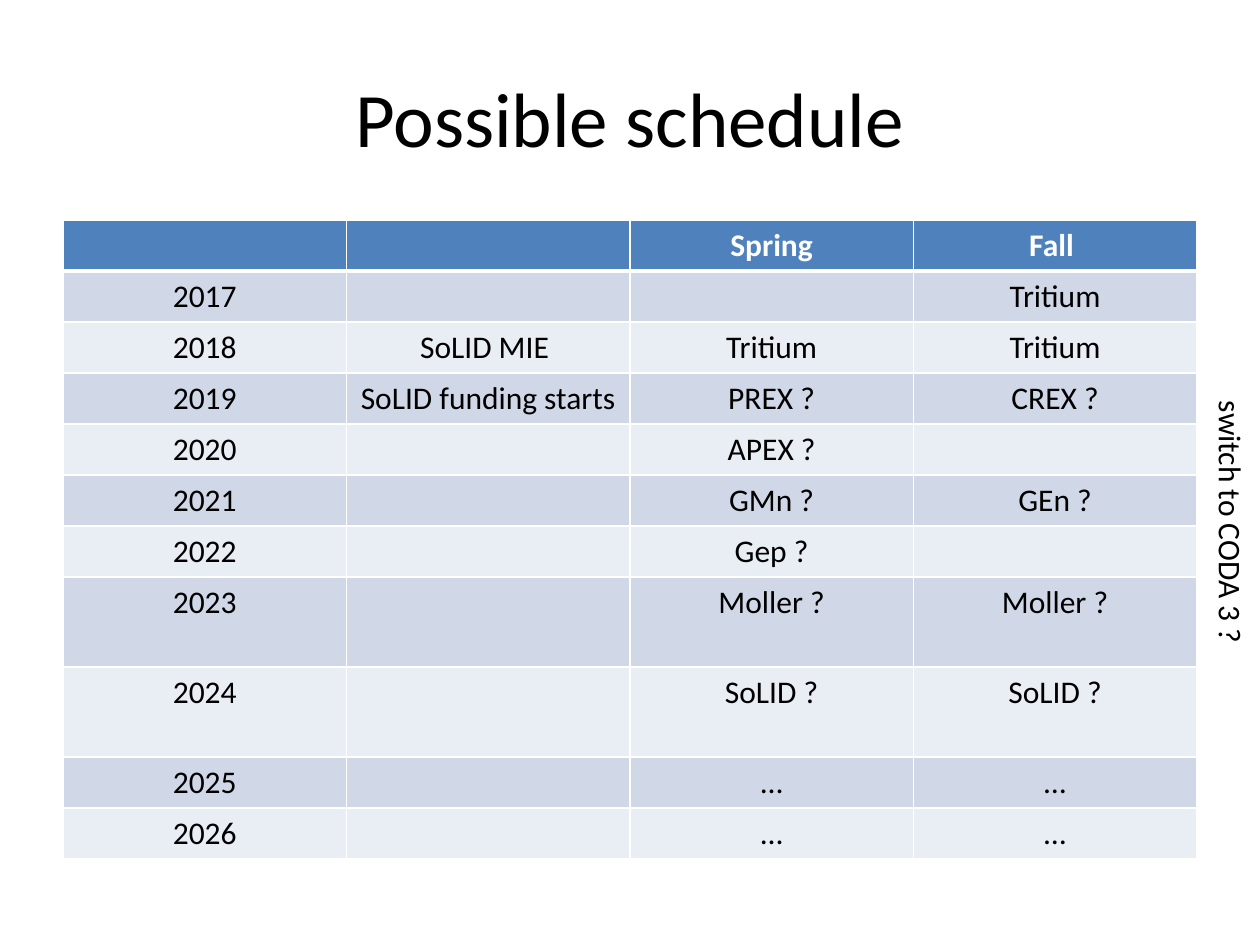
from dataclasses import dataclass

from lxml.etree import SubElement
from pptx import Presentation
from pptx.dml.color import RGBColor as Rgb
from pptx.enum.text import MSO_ANCHOR as Anchor, PP_ALIGN as Align
from pptx.oxml.ns import qn
from pptx.util import Pt

PX = 914400 // 126


@dataclass(frozen=True)
class Theme:
    font: str = "Calibri"
    title_size: int = 44
    body_size: int = 18
    ink: str = "000000"
    paper: str = "FFFFFF"
    header: str = "4F81BD"
    bands: tuple = ("D0D8E8", "E9EDF4")
    thin: int = 1
    thick: int = 3


THEME = Theme()

SCHEDULE = [
    ("", "", "Spring", "Fall "),
    ("2017", "", "", "Tritium"),
    ("2018", "SoLID MIE ", "Tritium", "Tritium"),
    ("2019", "SoLID funding starts", "PREX ?", "CREX ?"),
    ("2020", "", "APEX ?", ""),
    ("2021", "", "GMn ?", "GEn ?"),
    ("2022", "", "Gep ?", ""),
    ("2023", "", "Moller ?", "Moller ?"),
    ("2024", "", "SoLID ?", "SoLID ?"),
    ("2025", "", "…", "…"),
    ("2026", "", "…", "…"),
]
TALL_YEARS = ("2023", "2024")
ROW_HEIGHT, TALL_ROW_HEIGHT = 51, 90


def scaled(box):
    return [length * PX for length in box]


def write(frame, text, size, color, align, bold=False):
    frame.text = text
    para = frame.paragraphs[0]
    para.alignment = align
    for font in [para.font] + [span.font for span in para.runs]:
        font.name = THEME.font
        font.size = Pt(size)
        font.bold = bold
        font.color.rgb = Rgb.from_string(color)


def set_borders(cell, top, bottom):
    """Draw the cell's four sides; top and bottom are widths in points."""
    properties = cell._tc.get_or_add_tcPr()
    widths = {"a:lnL": THEME.thin, "a:lnR": THEME.thin, "a:lnT": top, "a:lnB": bottom}
    for side, width in widths.items():
        line = SubElement(properties, qn(side), w=str(Pt(width)))
        fill = SubElement(line, qn("a:solidFill"))
        SubElement(fill, qn("a:srgbClr"), val=THEME.paper)


def add_title(page, box, text):
    frame = page.shapes.add_textbox(*scaled(box)).text_frame
    frame.word_wrap = True
    frame.vertical_anchor = Anchor.MIDDLE
    write(frame, text, THEME.title_size, THEME.ink, Align.CENTER)


def add_schedule(page, box, rows):
    table = page.shapes.add_table(len(rows), len(rows[0]), *scaled(box)).table
    for r, row in enumerate(rows):
        height = TALL_ROW_HEIGHT if row[0] in TALL_YEARS else ROW_HEIGHT
        table.rows[r].height = height * PX
        is_header = r == 0
        fill = THEME.header if is_header else THEME.bands[(r - 1) % 2]
        color = THEME.paper if is_header else THEME.ink
        top = THEME.thick if r == 1 else THEME.thin
        bottom = THEME.thick if is_header else THEME.thin
        for c, text in enumerate(row):
            cell = table.cell(r, c)
            write(cell.text_frame, text, THEME.body_size, color, Align.CENTER, is_header)
            set_borders(cell, top, bottom)
            cell.fill.solid()
            cell.fill.fore_color.rgb = Rgb.from_string(fill)


def add_side_note(page, box, text):
    """Place a note that reads downwards; box is its place before turning."""
    note = page.shapes.add_textbox(*scaled(box))
    note.rotation = 90
    note.text_frame.word_wrap = False
    write(note.text_frame, text, THEME.body_size, THEME.ink, Align.LEFT)


def main():
    deck = Presentation()
    deck.slide_width, deck.slide_height = scaled((1260, 945))
    page = deck.slides.add_slide(deck.slide_layouts[6])
    add_title(page, (63, 38, 1134, 157), "Possible schedule")
    add_schedule(page, (63, 220, 1134, 639), SCHEDULE)
    add_side_note(page, (1096, 499, 271, 50), "switch to CODA 3 ?")
    deck.save("out.pptx")


if __name__ == "__main__":
    main()
